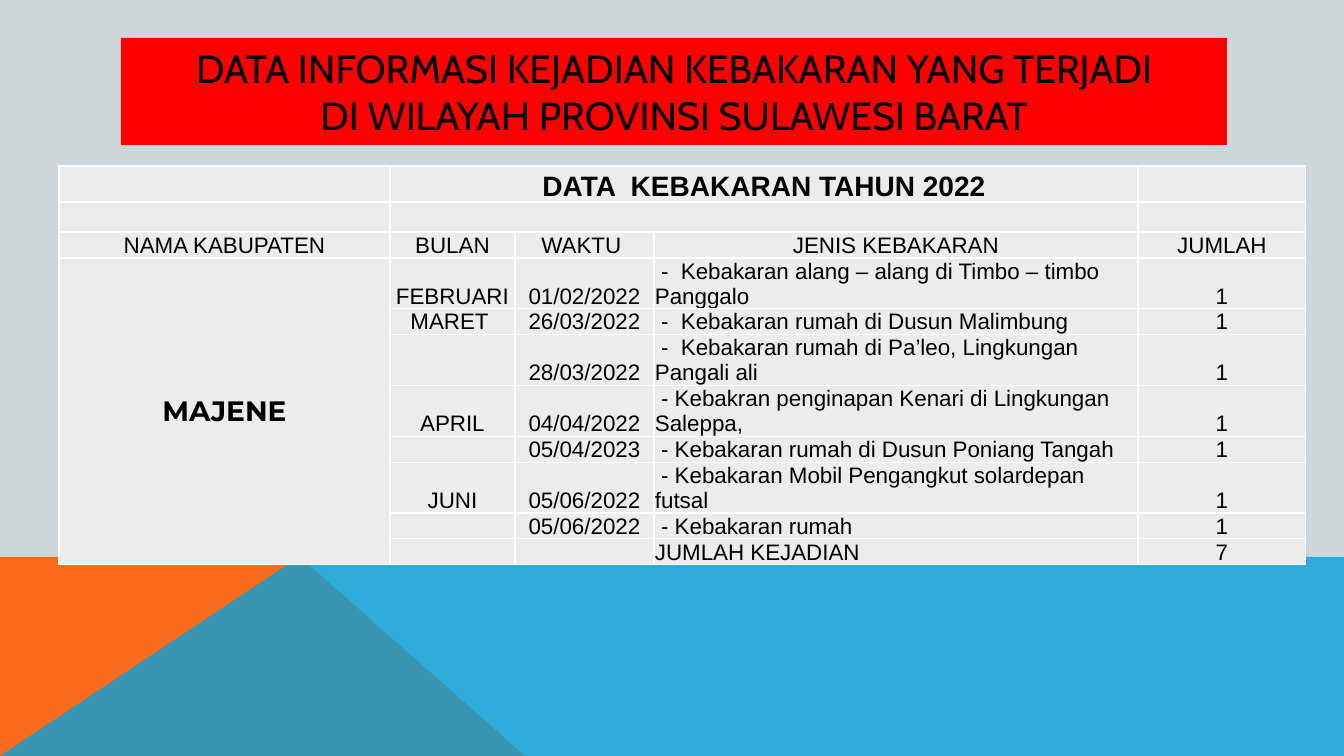
"""Build the slide on fire incidents in West Sulawesi, 2022."""
from dataclasses import dataclass

from lxml import etree
from pptx import Presentation
from pptx import util as u
from pptx.dml.color import RGBColor
from pptx.enum import shapes, text
from pptx.oxml.ns import qn

PX = 914400 / 100.8
WIDTH, HEIGHT = 1344, 756
HORIZON = 557
BLACK, WHITE, CELL_GREY = "000000", "FFFFFF", "ECECEC"
CENTER, LEFT = text.PP_ALIGN.CENTER, text.PP_ALIGN.LEFT

COLUMN_WIDTHS = [331, 125, 139, 484, 168]
HEADER_HEIGHTS = [36, 30, 26]
INCIDENT_HEIGHT = 22
HEADINGS = ["NAMA KABUPATEN", "BULAN", "WAKTU ", "JENIS KEBAKARAN", "JUMLAH"]


@dataclass
class Incident:
    """One row of the table below the headings."""
    month: str
    date: str
    kind: str
    count: str = "1"


@dataclass
class Band:
    """One coloured area at the foot of the slide."""
    points: list[tuple[int, int]]
    color: str
    opacity: int


@dataclass
class Style:
    """The look of the text in a cell."""
    size: int = 16
    font: str = "Arial"
    bold: bool = False
    anchor: text.MSO_ANCHOR = text.MSO_ANCHOR.BOTTOM


INCIDENTS = [
    Incident("FEBRUARI", "01/02/2022", " -  Kebakaran alang – alang di Timbo – timbo Panggalo"),
    Incident("MARET ", "26/03/2022", " -  Kebakaran rumah di Dusun Malimbung"),
    Incident("", "28/03/2022", " -  Kebakaran rumah di Pa’leo, Lingkungan Pangali ali"),
    Incident("APRIL", "04/04/2022", " - Kebakran penginapan Kenari di Lingkungan Saleppa,"),
    Incident("", "05/04/2023", " - Kebakaran rumah di Dusun Poniang Tangah"),
    Incident("JUNI", "05/06/2022", " - Kebakaran Mobil Pengangkut solardepan futsal"),
    Incident("", "05/06/2022", " - Kebakaran rumah"),
    Incident("", "", "JUMLAH KEJADIAN", "7"),
]
BANDS = [
    Band([(0, HEIGHT), (0, HORIZON), (300, HORIZON), (525, HEIGHT)], "F96A1B", 100),
    Band([(0, HEIGHT), (299, HORIZON), (WIDTH, HORIZON), (WIDTH, HEIGHT)], "08A1D9", 80),
]
BODY = Style()
STYLES = {
    (0, 1): Style(size=20, bold=True),
    (3, 0): Style(size=20, font="Montserrat", bold=True, anchor=text.MSO_ANCHOR.MIDDLE),
}


def px(length: int) -> u.Emu:
    """Turn pixels into EMU."""
    return u.Emu(round(length * PX))


def paint(fill, color: str) -> None:
    """Give a fill one solid colour."""
    fill.solid()
    fill.fore_color.rgb = RGBColor.from_string(color)


def format_runs(paragraph, size: int, font: str, bold: bool = False) -> None:
    """Set the font of every run in a paragraph."""
    for run in paragraph.runs:
        run.font.size = u.Pt(size)
        run.font.name = font
        run.font.bold = bold
        paint(run.font.fill, BLACK)


def draw_band(slide, band: Band) -> None:
    """Draw a coloured area without an outline."""
    builder = slide.shapes.build_freeform(*band.points[0], scale=PX)
    builder.add_line_segments(band.points[1:], close=True)
    area = builder.convert_to_shape()
    area.shadow.inherit = False
    area.line.fill.background()
    paint(area.fill, band.color)
    if band.opacity < 100:
        tint = area.fill._xPr.find(".//" + qn("a:srgbClr"))
        etree.SubElement(tint, qn("a:alpha"), val=str(band.opacity * 1000))


def draw_title(slide) -> None:
    """Draw the red title box."""
    title = slide.shapes.add_shape(
        shapes.MSO_SHAPE.RECTANGLE, px(121), px(38), px(1106), px(107))
    title.shadow.inherit = False
    title.line.fill.background()
    paint(title.fill, "FF0000")
    frame = title.text_frame
    frame.word_wrap = True
    frame.vertical_anchor = text.MSO_ANCHOR.MIDDLE
    frame.text = ("DATA INFORMASI KEJADIAN KEBAKARAN YANG TERJADI\v"
                  "DI WILAYAH PROVINSI SULAWESI BARAT")
    frame.paragraphs[0].alignment = CENTER
    format_runs(frame.paragraphs[0], 28, "Cabin")


def fill_cell(cell, words: str, style: Style, align: text.PP_ALIGN) -> None:
    """Write a cell and set its borders, fill and text."""
    cell.margin_left = cell.margin_right = cell.margin_top = px(1)
    cell.margin_bottom = 0
    cell.vertical_anchor = style.anchor
    for side in ("a:lnL", "a:lnR", "a:lnT", "a:lnB"):
        border = etree.SubElement(cell._tc.tcPr, qn(side), w=str(u.Pt(1)))
        solid = etree.SubElement(border, qn("a:solidFill"))
        etree.SubElement(solid, qn("a:srgbClr"), val=WHITE)
    paint(cell.fill, CELL_GREY)
    cell.text_frame.text = words
    paragraph = cell.text_frame.paragraphs[0]
    paragraph.alignment = align
    format_runs(paragraph, style.size, style.font, style.bold)
    if not words:
        ending = etree.SubElement(
            paragraph._p, qn("a:endParaRPr"), sz=str(style.size * 100))
        etree.SubElement(ending, qn("a:latin"), typeface=style.font)


def draw_incidents(slide) -> None:
    """Draw the table of fires by month."""
    rows = [["", "DATA  KEBAKARAN TAHUN 2022", "", "", ""], [""] * 5, HEADINGS]
    rows += [["", i.month, i.date, i.kind, i.count] for i in INCIDENTS]
    first = len(HEADER_HEIGHTS)
    rows[first][0] = "MAJENE"
    heights = HEADER_HEIGHTS + [INCIDENT_HEIGHT] * len(INCIDENTS)
    frame = slide.shapes.add_table(
        len(rows), len(COLUMN_WIDTHS), px(59), px(166),
        px(sum(COLUMN_WIDTHS)), px(sum(heights)))
    table = frame.table
    table.first_row = table.horz_banding = False
    for column, width in zip(table.columns, COLUMN_WIDTHS):
        column.width = px(width)
    for row, height in zip(table.rows, heights):
        row.height = px(height)
    for r, row_words in enumerate(rows):
        for c, words in enumerate(row_words):
            align = LEFT if c == 3 and r >= first else CENTER
            fill_cell(table.cell(r, c), words, STYLES.get((r, c), BODY), align)
    for r in (0, 1):
        table.cell(r, 1).merge(table.cell(r, 3))
    table.cell(first, 0).merge(table.cell(len(rows) - 1, 0))


def main() -> None:
    """Build and save the slide."""
    deck = Presentation()
    deck.slide_width, deck.slide_height = px(WIDTH), px(HEIGHT)
    slide = deck.slides.add_slide(deck.slide_layouts[6])
    paint(slide.background.fill, "CDD7D9")
    for band in BANDS:
        draw_band(slide, band)
    draw_incidents(slide)
    draw_title(slide)
    deck.save("out.pptx")


if __name__ == "__main__":
    main()
